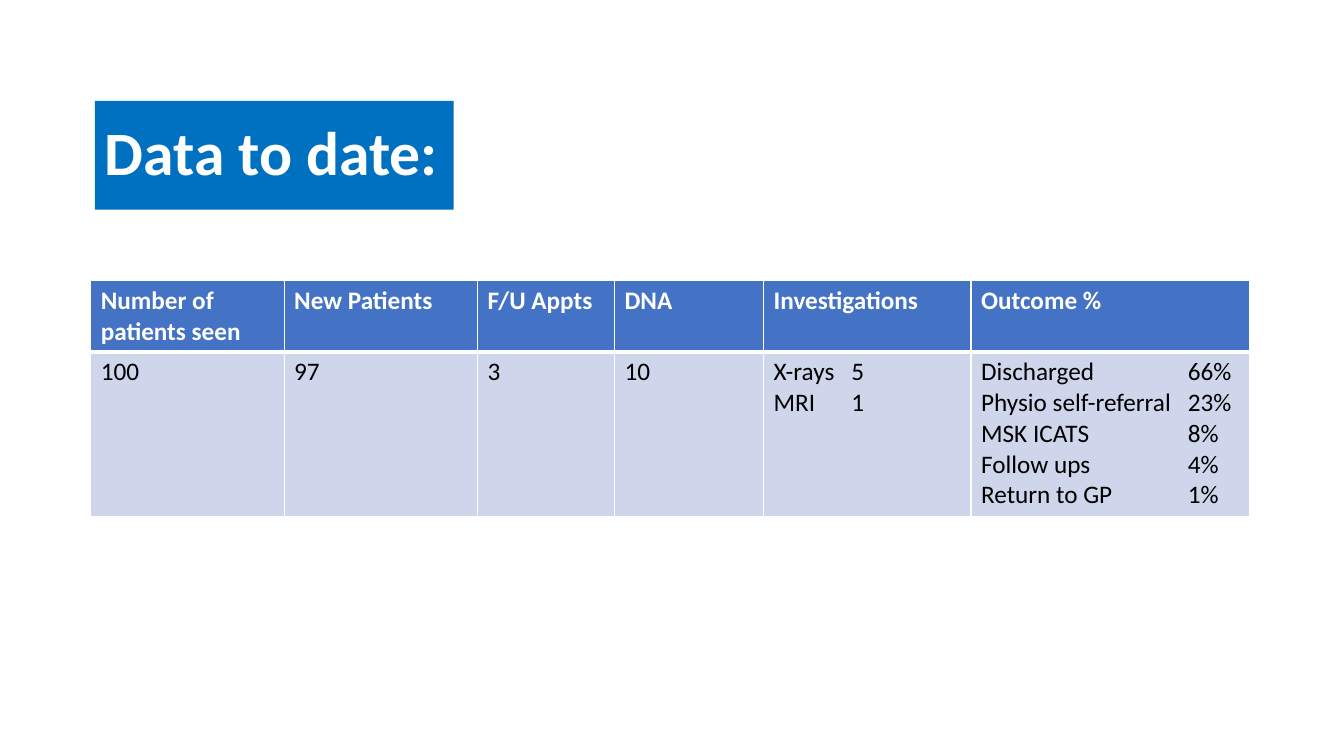
import pptx
import pptx.dml.color
import pptx.enum.text
import pptx.oxml
import pptx.oxml.ns
import pptx.util
from pptx.util import Inches

FONT = "Calibri"
COLORS = {
    "banner": "0070C0",
    "header": "4472C4",
    "body": "CFD5EA",
    "light": "FFFFFF",
    "dark": "000000",
}
HEADINGS = ["Number of patients seen", "New Patients", "F/U Appts", "DNA",
            "Investigations", "Outcome %"]
RESULTS = [
    ["100"],
    ["97"],
    ["3"],
    ["10"],
    ["X-rays\t5", "MRI\t1"],
    ["Discharged\t66%", "Physio self-referral\t23%", "MSK ICATS\t8%",
     "Follow ups\t4%", "Return to GP\t1%"],
]
COLUMN_WIDTHS = [1.92, 1.92, 1.36, 1.48, 2.06, 2.77]
ROW_HEIGHTS = [0.7, 1.63]
VALUE_STOPS = {4: 0.77, 5: 2.05}  # column: distance of its values from the text edge


def rgb(name):
    return pptx.dml.color.RGBColor.from_string(COLORS[name])


def add_run(paragraph, text, size, color, bold):
    run = paragraph.add_run()
    run.text = text
    run.font.name = FONT
    run.font.size = pptx.util.Pt(size)
    run.font.bold = bold
    run.font.color.rgb = rgb(color)


def set_borders(cell, widths):
    """Draw white borders; widths maps L, R, T, B to points."""
    properties = cell._tc.get_or_add_tcPr()
    for position, (side, width) in enumerate(widths.items()):
        border = pptx.oxml.parse_xml(
            f'<a:ln{side} {pptx.oxml.ns.nsdecls("a")} w="{pptx.util.Pt(width)}">'
            f'<a:solidFill><a:srgbClr val="{COLORS["light"]}"/></a:solidFill>'
            f'</a:ln{side}>')
        properties.insert(position, border)


def add_tab_stop(paragraph, distance):
    paragraph._p.get_or_add_pPr().append(pptx.oxml.parse_xml(
        f'<a:tabLst {pptx.oxml.ns.nsdecls("a")}>'
        f'<a:tab pos="{Inches(distance)}" algn="l"/></a:tabLst>'))


def fill_cell(cell, lines, fill, color, bold, widths, stop=None):
    cell.fill.solid()
    cell.fill.fore_color.rgb = rgb(fill)
    set_borders(cell, widths)
    for index, line in enumerate(lines):
        frame = cell.text_frame
        paragraph = frame.add_paragraph() if index else frame.paragraphs[0]
        if stop:
            add_tab_stop(paragraph, stop)
        add_run(paragraph, line, 18, color, bold)


def place_title(slide, left, top, width, height):
    title = slide.shapes.title
    title.left, title.top = Inches(left), Inches(top)
    title.width, title.height = Inches(width), Inches(height)
    title.fill.solid()
    title.fill.fore_color.rgb = rgb("banner")
    title.text_frame.vertical_anchor = pptx.enum.text.MSO_ANCHOR.MIDDLE
    heading = title.text_frame.paragraphs[0]
    heading.alignment = pptx.enum.text.PP_ALIGN.LEFT
    heading.line_spacing = 0.9
    add_run(heading, "Data to date:", 44, "light", True)


def add_results_table(slide, left, top, width, height):
    results = slide.shapes.add_table(
        len(ROW_HEIGHTS), len(HEADINGS),
        Inches(left), Inches(top), Inches(width), Inches(height)).table
    for row, share in zip(results.rows, ROW_HEIGHTS):
        row.height = Inches(height * share / sum(ROW_HEIGHTS))
    for column, share in zip(results.columns, COLUMN_WIDTHS):
        column.width = Inches(width * share / sum(COLUMN_WIDTHS))
    for index, (heading, lines) in enumerate(zip(HEADINGS, RESULTS)):
        fill_cell(results.cell(0, index), [heading], "header", "light", True,
                  {"L": 1, "R": 1, "T": 1, "B": 3})
        fill_cell(results.cell(1, index), lines, "body", "dark", False,
                  {"L": 1, "R": 1, "T": 3, "B": 1}, VALUE_STOPS.get(index))


def main():
    deck = pptx.Presentation()
    deck.slide_width, deck.slide_height = Inches(13.33), Inches(7.5)
    slide = deck.slides.add_slide(deck.slide_layouts[5])
    place_title(slide, 0.94, 1, 3.56, 1.08)
    add_results_table(slide, 0.9, 2.78, 11.5, 2.33)
    deck.save("out.pptx")


if __name__ == "__main__":
    main()
